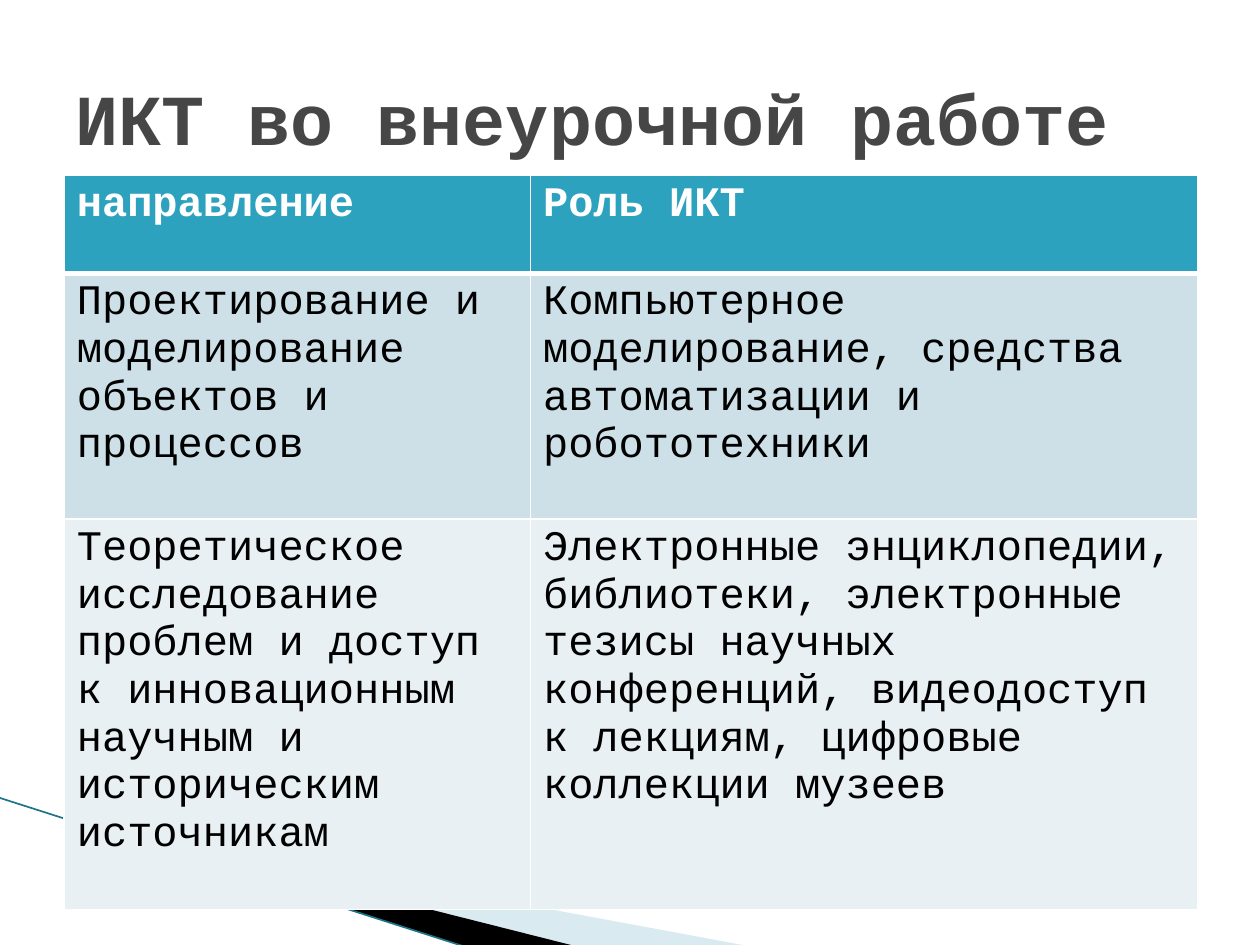
from lxml.etree import SubElement as Sub
from pptx import Presentation
from pptx.dml.color import RGBColor
from pptx.enum.shapes import MSO_CONNECTOR as Conn
from pptx.enum.text import MSO_ANCHOR as Anchor, PP_ALIGN as Align
from pptx.oxml.ns import qn
from pptx.util import Inches, Pt

ROWS = [
    ("направление", "Роль ИКТ"),
    ("Проектирование и моделирование объектов и процессов",
     "Компьютерное моделирование, средства автоматизации и робототехники"),
    ("Теоретическое исследование проблем и доступ к инновационным научным "
     "и историческим источникам",
     "Электронные энциклопедии, библиотеки, электронные тезисы научных "
     "конференций, видеодоступ к лекциям, цифровые коллекции музеев"),
]
FILLS = ["2DA2BF", "CDE0E8", "E8F0F4"]
WIDTHS = [3.7, 5.3]
HEIGHTS = [0.78, 1.95, 3.1]


def color(text):
    return RGBColor.from_string(text)


class Deck:
    """Holds the text style and the current slide."""
    font = "Courier New"
    edge = "FFFFFF"

    def __init__(self):
        self.prs = Presentation()
        self.prs.slide_width, self.prs.slide_height = Inches(10), Inches(7.5)
        self.slide = self.prs.slides.add_slide(self.prs.slide_layouts[5])
        self.shapes = self.slide.shapes

    def style(self, para, size, hue, bold):
        para.alignment = Align.LEFT
        look = {"name": self.font, "size": Pt(size), "bold": bold}
        for key, value in look.items():
            setattr(para.font, key, value)
        para.font.color.rgb = color(hue)

    def wedge(self, points, hue, alpha=100):
        spots = [(Inches(x), Inches(y)) for x, y in points]
        pen = self.shapes.build_freeform(*spots[0], scale=1.0)
        pen.add_line_segments(spots[1:], close=True)
        shape = pen.convert_to_shape()
        shape.shadow.inherit = False
        shape.fill.solid()
        shape.fill.fore_color.rgb = color(hue)
        shape.line.fill.background()
        if alpha < 100:
            tint = shape.element.spPr.find(".//" + qn("a:srgbClr"))
            Sub(tint, qn("a:alpha"), val=str(alpha * 1000))

    def line(self, start, end, hue, width):
        ends = [Inches(v) for v in (*start, *end)]
        line = self.shapes.add_connector(Conn.STRAIGHT, *ends)
        line.line.color.rgb = color(hue)
        line.line.width = Pt(width)
        Sub(line.element.spPr, qn("a:effectLst"))

    def border(self, cell, widths):
        """Draws the cell's edges; widths maps L, R, T and B to points."""
        props = cell._tc.get_or_add_tcPr()
        for side, width in widths.items():
            edge = Sub(props, qn("a:ln" + side), w=str(Pt(width)))
            Sub(Sub(edge, qn("a:solidFill")), qn("a:srgbClr"), val=self.edge)

    def table(self, left, top):
        box = [Inches(v) for v in (left, top, sum(WIDTHS), sum(HEIGHTS))]
        grid = self.shapes.add_table(len(ROWS), len(WIDTHS), *box).table
        for col, width in zip(grid.columns, WIDTHS):
            col.width = Inches(width)
        for row, height in zip(grid.rows, HEIGHTS):
            row.height = Inches(height)
        for r, texts in enumerate(ROWS):
            head = r == 0
            edges = {"L": 1, "R": 1, "T": 3 if r == 1 else 1,
                     "B": 3 if head else 1}
            for c, text in enumerate(texts):
                cell = grid.cell(r, c)
                self.border(cell, edges)
                cell.fill.solid()
                cell.fill.fore_color.rgb = color(FILLS[r])
                cell.text = text
                self.style(cell.text_frame.paragraphs[0], 24,
                           "FFFFFF" if head else "000000", head)

    def title(self, text, left, top, width, height):
        title = self.shapes.title
        box = {"left": left, "top": top, "width": width, "height": height}
        for key, value in box.items():
            setattr(title, key, Inches(value))
        title.text_frame.text = text
        title.text_frame.vertical_anchor = Anchor.MIDDLE
        self.style(title.text_frame.paragraphs[0], 41, "464646", True)
        title.element.getparent().append(title.element)  # bring to front


def main():
    deck = Deck()
    deck.wedge([(0.55, 6.51), (5.95, 7.51), (4.56, 7.51), (0.55, 6.5)],
               "A0CBDC", 40)
    deck.wedge([(0.53, 6.49), (4.57, 7.51), (3.72, 7.52), (0.54, 6.5)],
               "000000")
    deck.line((-0.01, 6.33), (3.71, 7.52), "1B7587", 0.95)
    deck.table(0.51, 1.39)
    deck.title("ИКТ во внеурочной работе", 0.5, 0.3, 9, 1.25)
    deck.prs.save("out.pptx")


if __name__ == "__main__":
    main()
